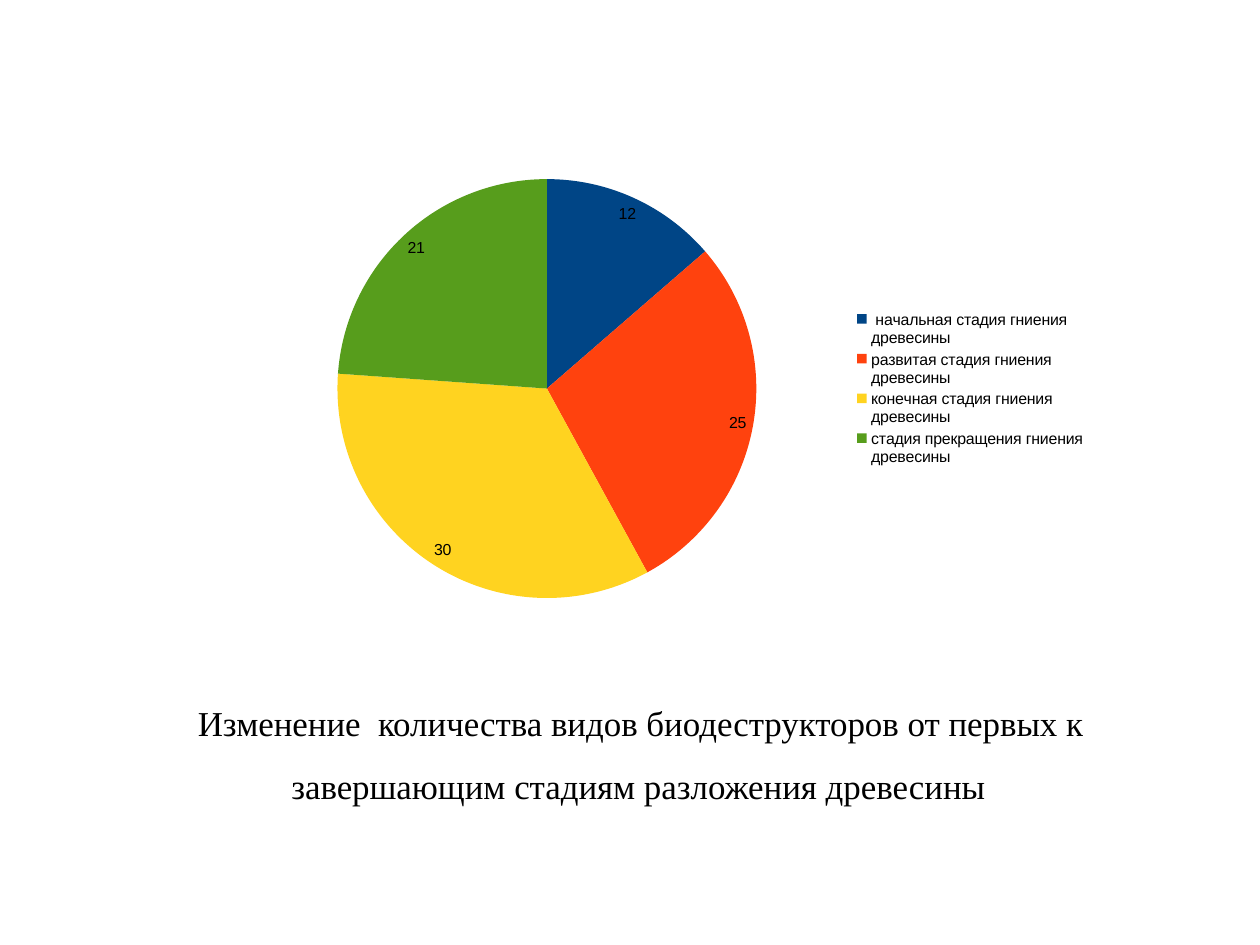
from lxml import etree
from pptx import Presentation
from pptx.chart.data import CategoryChartData
from pptx.dml.color import RGBColor
from pptx.enum.chart import XL_CHART_TYPE, XL_LABEL_POSITION, XL_LEGEND_POSITION
from pptx.enum.text import MSO_ANCHOR, MSO_AUTO_SIZE, PP_ALIGN
from pptx.oxml.ns import qn
from pptx.util import Pt

PIE = XL_CHART_TYPE.PIE
BEST_FIT = XL_LABEL_POSITION.BEST_FIT
RIGHT = XL_LEGEND_POSITION.RIGHT
CENTER = PP_ALIGN.CENTER
TOP = MSO_ANCHOR.TOP
NO_AUTOFIT = MSO_AUTO_SIZE.NONE

BLACK = RGBColor(0x00, 0x00, 0x00)
STAGE_COLORS = [
    RGBColor(0x00, 0x45, 0x86),
    RGBColor(0xFF, 0x42, 0x0E),
    RGBColor(0xFF, 0xD3, 0x20),
    RGBColor(0x57, 0x9D, 0x1C),
]
STAGES = [
    " начальная стадия гниения древесины",
    "развитая стадия гниения древесины",
    "конечная стадия гниения древесины",
    "стадия прекращения гниения древесины",
]
SERIES = {
    "Series 1": [12, 25, 30, 21],
    "Series 2": [0, 0, 0, 0],
    "Series 3": [0, 0, 0, 0],
}
CAPTION_RUNS = [
    (" ", 11),
    ("Изменение  количества видов биодеструкторов от первых "
     "к завершающим стадиям разложения древесины", 22),
]


def set_layout(parent, index, inner=False, **box):
    """Place a chart part by fractions x, y, w, h of the chart area."""
    for old in parent.findall(qn("c:layout")):
        parent.remove(old)
    layout = etree.Element(qn("c:layout"))
    manual = etree.SubElement(layout, qn("c:manualLayout"))
    if inner:
        etree.SubElement(manual, qn("c:layoutTarget")).set("val", "inner")
    for side in ("x", "y"):
        etree.SubElement(manual, qn(f"c:{side}Mode")).set("val", "edge")
    for side, value in box.items():
        etree.SubElement(manual, qn(f"c:{side}")).set("val", str(value))
    parent.insert(index, layout)


def add_stage_pie(slide, left, top, width, height):
    data = CategoryChartData()
    data.categories = STAGES
    for name, values in SERIES.items():
        data.add_series(name, values)
    chart = slide.shapes.add_chart(PIE, left, top, width, height, data).chart
    chart.replace_data(data)  # a new pie holds only its first series
    chart.has_title = False
    chart.font.name = "Arial"
    chart.font.size = Pt(10)
    chart.font.color.rgb = BLACK

    plot = chart.plots[0]
    plot.vary_by_categories = True
    for series in plot.series:
        for i, color in enumerate(STAGE_COLORS):
            fmt = series.points[i].format
            fmt.fill.solid()
            fmt.fill.fore_color.rgb = color
            fmt.line.fill.background()
    labels = plot.series[0].data_labels
    labels.show_value = True
    labels.position = BEST_FIT

    chart.has_legend = True
    chart.legend.position = RIGHT
    chart.legend.include_in_layout = False
    area = chart.element.find(qn("c:chart"))
    set_layout(area.find(qn("c:plotArea")), 0, inner=True,
               x=0.11, y=0.03, w=0.49, h=0.94)
    set_layout(area.find(qn("c:legend")), 1, x=0.71, y=0.32, w=0.28, h=0.36)


def set_caption(title, left, top, width, height):
    title.left, title.top, title.width, title.height = left, top, width, height
    tf = title.text_frame
    tf.word_wrap = True
    tf.auto_size = NO_AUTOFIT
    tf.vertical_anchor = TOP
    p = tf.paragraphs[0]
    p.alignment = CENTER
    p.line_spacing = 1.5
    p.space_before = Pt(0)
    for text, size in CAPTION_RUNS:
        r = p.add_run()
        r.text = text
        r.font.name = "Times New Roman"
        r.font.size = Pt(size)
        r.font.color.rgb = BLACK


def main():
    prs = Presentation()
    prs.slide_width, prs.slide_height = Pt(793.75), Pt(595.25)
    slide = prs.slides.add_slide(prs.slide_layouts.get_by_name("Title Only"))
    add_stage_pie(slide, Pt(153.36), Pt(102.24), Pt(538.56), Pt(285.12))
    set_caption(slide.shapes.title, Pt(73.44), Pt(425.2), Pt(657.36), Pt(68.4))
    prs.save("out.pptx")


if __name__ == "__main__":
    main()
